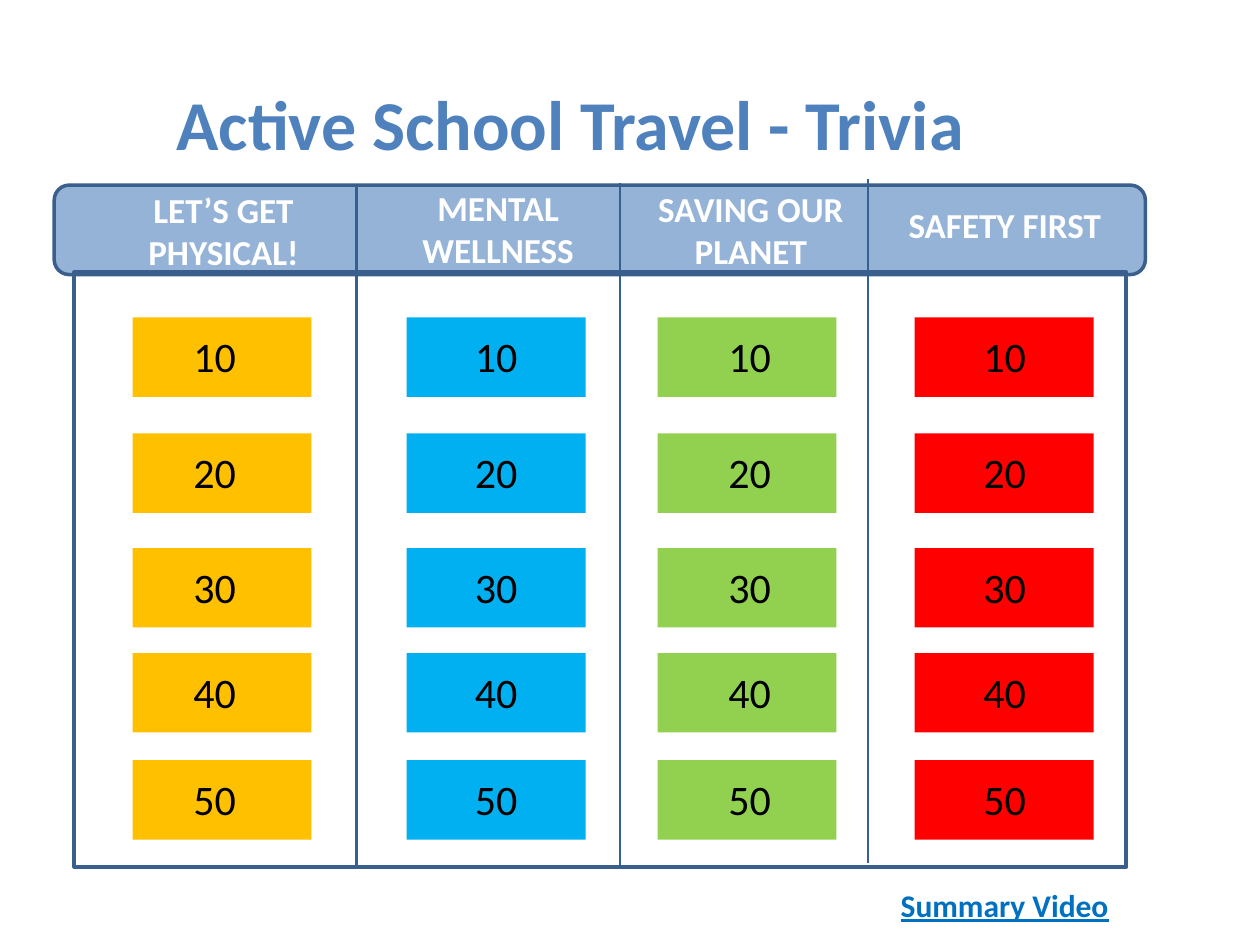
import pptx
import pptx.util
import pptx.dml.color
import pptx.enum.shapes
import pptx.enum.text
import pptx.oxml.ns
import lxml.etree

Pt = pptx.util.Pt
RGB = pptx.dml.color.RGBColor
SHAPE = pptx.enum.shapes.MSO_SHAPE
ALIGN = pptx.enum.text.PP_ALIGN
ANCHOR = pptx.enum.text.MSO_ANCHOR

TITLE_BLUE = RGB(0x4F, 0x81, 0xBD)
HEADER_BLUE = RGB(0x95, 0xB3, 0xD7)
BORDER_BLUE = RGB(0x3A, 0x5F, 0x8C)
DIVIDER_BLUE = RGB(0x37, 0x60, 0x92)
LINK_BLUE = RGB(0x00, 0x70, 0xC0)
ORANGE = RGB(0xFF, 0xC0, 0x00)
BLUE = RGB(0x00, 0xB0, 0xF0)
GREEN = RGB(0x92, 0xD0, 0x50)
RED = RGB(0xFF, 0x00, 0x00)
BLACK = RGB(0x00, 0x00, 0x00)
WHITE = RGB(0xFF, 0xFF, 0xFF)

TILE_W, TILE_H = 102.2, 45.4
LABEL_W, LABEL_H = 51, 36


class Board:
    font = "Calibri"

    def __init__(self, prs):
        self.s = prs.slides.add_slide(prs.slide_layouts[5])

    def set_text(self, tf, text, size, color, bold, align):
        tf.word_wrap = True
        p = tf.paragraphs[0]
        p.text = text
        p.alignment = align
        p.font.name = self.font
        p.font.size = Pt(size)
        p.font.bold = bold
        p.font.color.rgb = color
        return p

    def title(self, x, y, w, h, text):
        sp = self.s.shapes.title
        sp.left, sp.top, sp.width, sp.height = Pt(x), Pt(y), Pt(w), Pt(h)
        sp.text_frame.vertical_anchor = ANCHOR.MIDDLE
        self.set_text(sp.text_frame, text, 40, TITLE_BLUE, True, ALIGN.LEFT)

    def text(self, x, y, w, h, text, size, color, bold=False, align=ALIGN.CENTER):
        sp = self.s.shapes.add_textbox(Pt(x), Pt(y), Pt(w), Pt(h))
        return self.set_text(sp.text_frame, text, size, color, bold, align)

    def shape(self, kind, x, y, w, h, fill=None, line=None, weight=0):
        sp = self.s.shapes.add_shape(kind, Pt(x), Pt(y), Pt(w), Pt(h))
        sp.shadow.inherit = False
        if fill is None:
            sp.fill.background()
        else:
            sp.fill.solid()
            sp.fill.fore_color.rgb = fill
        if line is None:
            sp.line.fill.background()
        else:
            sp.line.color.rgb = line
            sp.line.width = Pt(weight)

    def divider(self, x, top, bottom):
        c = self.s.shapes.add_connector(
            pptx.enum.shapes.MSO_CONNECTOR.STRAIGHT, Pt(x), Pt(top), Pt(x), Pt(bottom))
        c.line.color.rgb = DIVIDER_BLUE
        c.line.width = Pt(1.5)
        sp_pr = c._element.spPr
        lxml.etree.SubElement(sp_pr, pptx.oxml.ns.qn("a:effectLst"))


def main():
    prs = pptx.Presentation()
    prs.slide_width, prs.slide_height = Pt(720), Pt(540)
    board = Board(prs)

    board.title(93.6, 37.4, 532.8, 65.5, "Active School Travel - Trivia")
    board.shape(SHAPE.ROUNDED_RECTANGLE, 31, 105.8, 623.5, 51.1,
                HEADER_BLUE, BORDER_BLUE, 2)

    headers = [
        ("LET’S GET PHYSICAL!", 59, 104.4, 137.5, 55.4),
        ("MENTAL WELLNESS", 221, 103, 127.4, 55.4),
        ("SAVING OUR PLANET", 363.9, 103.7, 130.3, 55.4),
        ("SAFETY FIRST", 489.6, 113, 169.2, 31.7),
    ]
    for text, x, y, w, h in headers:
        board.text(x, y, w, h, text, 20, WHITE, True)

    board.shape(SHAPE.RECTANGLE, 42.5, 155.5, 601.2, 339.8, line=BORDER_BLUE, weight=2.25)
    for x, top, bottom in [(203.8, 105.8, 496.8), (354.2, 104.4, 496.1), (496.1, 102.2, 493.2)]:
        board.divider(x, top, bottom)

    columns = [(75.8, 97.2, ORANGE), (232.4, 258, BLUE),
               (375.8, 402.8, GREEN), (522.7, 548.6, RED)]
    rows = [(10, 181.4), (20, 247.7), (30, 313.2), (40, 373.2), (50, 434.4)]
    for tile_x, label_x, color in columns:
        for points, y in rows:
            board.shape(SHAPE.RECTANGLE, tile_x, y, TILE_W, TILE_H, color)
            board.text(label_x, y + 4, LABEL_W, LABEL_H, str(points), 24, BLACK)

    p = board.text(507.6, 502.6, 162.7, 28.8, "Summary Video", 18, LINK_BLUE, True, ALIGN.LEFT)
    p.font.underline = True

    prs.save("out.pptx")


if __name__ == "__main__":
    main()
